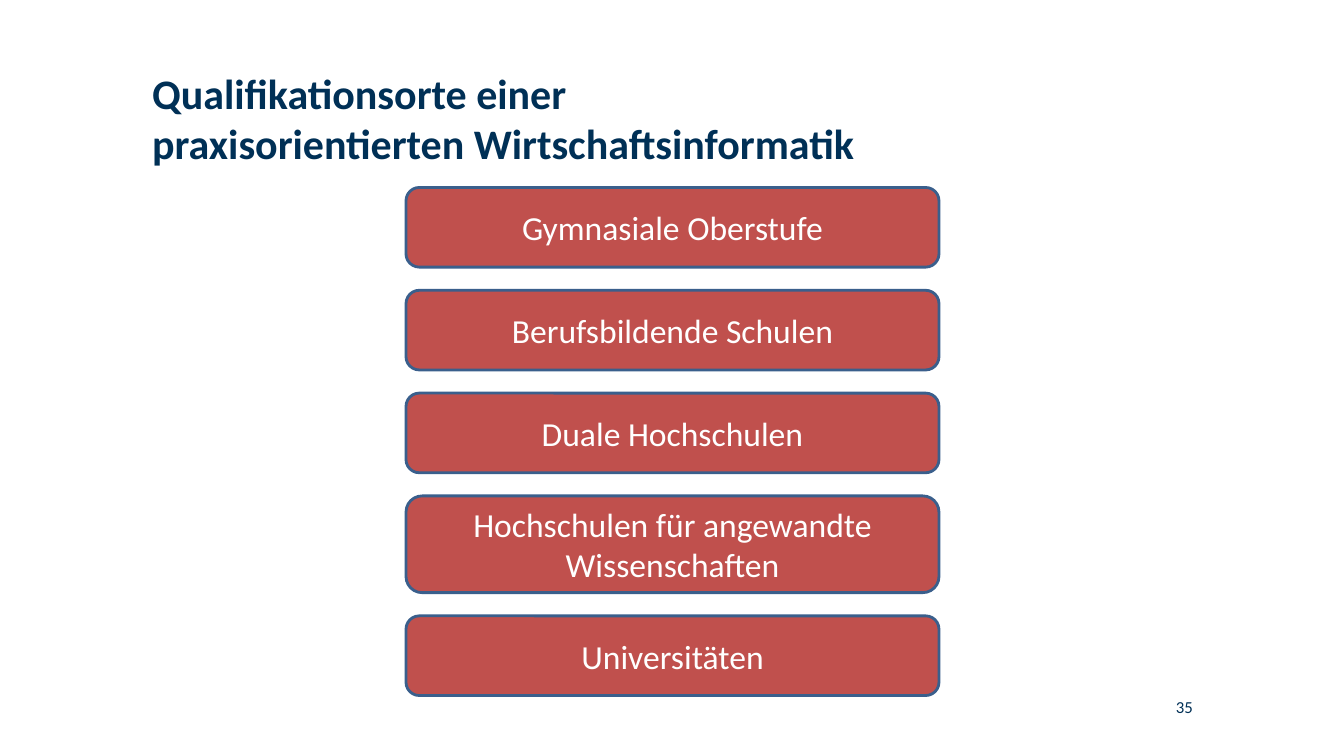
from pptx import Presentation
from pptx.dml.color import RGBColor
from pptx.enum.shapes import MSO_SHAPE
from pptx.enum.text import MSO_ANCHOR, MSO_AUTO_SIZE, PP_ALIGN
from pptx.util import Pt

PX = 9144
HEX = {"navy": "003056", "red": "C0504D", "blue": "3A5F8C", "white": "FFFFFF"}
FLUSH = {"margin_left": 0, "margin_top": 0, "margin_right": 0, "margin_bottom": 0}
FRAME = {"word_wrap": True, "auto_size": MSO_AUTO_SIZE.NONE}
PLACES = [
    ("Gymnasiale Oberstufe", 79),
    ("Berufsbildende Schulen", 79),
    ("Duale Hochschulen", 79),
    ("Hochschulen für angewandte Wissenschaften", 96),
    ("Universitäten", 79),
]


def color(name):
    return RGBColor.from_string(HEX[name])


def apply(item, values):
    for key, value in values.items():
        setattr(item, key, value)


def scale(box):
    return [n * PX for n in box]


def write(shape, text, size, tint, align, frame, bold=False):
    apply(shape.text_frame, FRAME | frame)
    para = shape.text_frame.paragraphs[0]
    para.alignment = align
    run = para.add_run()
    run.text = text
    apply(run.font, {"name": "Calibri", "size": Pt(size), "bold": bold})
    run.font.color.rgb = color(tint)


def head(slide, box):
    title = slide.shapes.title
    apply(title, dict(zip(("left", "top", "width", "height"), scale(box))))
    write(title, "Qualifikationsorte einer praxisorientierten Wirtschaftsinformatik",
          30, "navy", PP_ALIGN.LEFT,
          FLUSH | {"vertical_anchor": MSO_ANCHOR.TOP}, True)


def stack(slide, box, gap):
    left, top, width = box
    for text, height in PLACES:
        card = slide.shapes.add_shape(
            MSO_SHAPE.ROUNDED_RECTANGLE, *scale((left, top, width, height)))
        card.shadow.inherit = False
        card.fill.solid()
        card.fill.fore_color.rgb = color("red")
        card.line.color.rgb = color("blue")
        card.line.width = Pt(2)
        write(card, text, 24, "white", PP_ALIGN.CENTER,
              {"vertical_anchor": MSO_ANCHOR.MIDDLE})
        top += height + gap


def foot(slide, box):
    label = slide.shapes.add_textbox(*scale(box))
    write(label, "35", 12, "navy", PP_ALIGN.RIGHT, FLUSH)


def main():
    deck = Presentation()
    apply(deck, {"slide_width": 1334 * PX, "slide_height": 750 * PX})
    slide = deck.slides.add_slide(deck.slide_layouts[5])
    head(slide, (151, 67, 706, 137))
    foot(slide, (1030, 691, 154, 20))
    stack(slide, (403, 186, 529), 23)
    deck.save("out.pptx")


if __name__ == "__main__":
    main()
